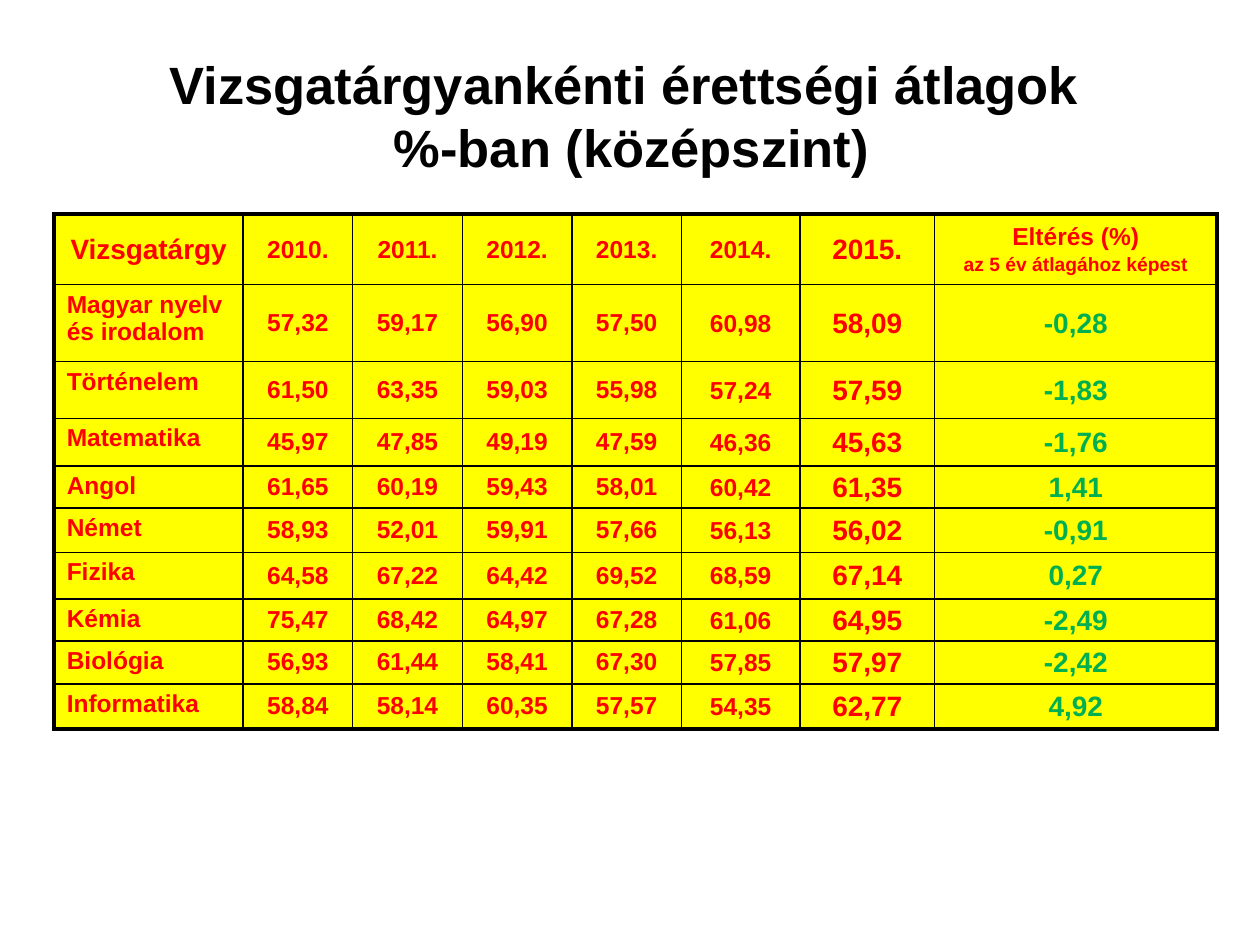
from dataclasses import dataclass

from lxml.etree import SubElement
from pptx import Presentation
from pptx.dml.color import RGBColor as RGB
from pptx.enum.text import MSO_ANCHOR as Anchor, PP_ALIGN as Align
from pptx.oxml.ns import qn
from pptx.util import Inches, Pt


@dataclass(frozen=True)
class Theme:
    font: str = "Arial"
    ink: str = "000000"
    cell: str = "FFFF00"
    score: str = "FF0000"
    change: str = "00B050"
    title_size: float = 30
    strong_size: float = 16
    body_size: float = 14
    note_size: float = 11
    outer_line: float = 2.25
    inner_line: float = 1


HEADINGS = ["Vizsgatárgy", "2010.", "2011.", "2012.", "2013.", "2014.", "2015.",
            "Eltérés (%)\naz 5 év átlagához képest"]
RESULTS = [
    ["Magyar nyelv és irodalom", "57,32", "59,17", "56,90", "57,50", "60,98", "58,09", "-0,28"],
    ["Történelem", "61,50", "63,35", "59,03", "55,98", "57,24", "57,59", "-1,83"],
    ["Matematika", "45,97", "47,85", "49,19", "47,59", "46,36", "45,63", "-1,76"],
    ["Angol", "61,65", "60,19", "59,43", "58,01", "60,42", "61,35", "1,41"],
    ["Német", "58,93", "52,01", "59,91", "57,66", "56,13", "56,02", "-0,91"],
    ["Fizika", "64,58", "67,22", "64,42", "69,52", "68,59", "67,14", "0,27"],
    ["Kémia", "75,47", "68,42", "64,97", "67,28", "61,06", "64,95", "-2,49"],
    ["Biológia", "56,93", "61,44", "58,41", "67,30", "57,85", "57,97", "-2,42"],
    ["Informatika", "58,84", "58,14", "60,35", "57,57", "54,35", "62,77", "4,92"],
]
COLUMN_WIDTHS = [1.5] + [0.87] * 4 + [0.94, 1.07, 2.24]
ROW_HEIGHTS = [0.56, 0.61, 0.45, 0.38, 0.32, 0.35, 0.37, 0.33, 0.34, 0.36]
SUBJECT, LATEST_BASE, LATEST, CHANGE = 0, 5, 6, 7


class ResultsSlide:
    """Draws the elements of one slide in a shared style."""

    def __init__(self, slide, theme):
        self.slide = slide
        self.theme = theme

    def style(self, paragraph, size, color, align):
        paragraph.alignment = align
        for run in paragraph.runs:
            run.font.name = self.theme.font
            run.font.size = Pt(size)
            run.font.bold = True
            run.font.color.rgb = RGB.from_string(color)

    def title(self, text, left, top, width, height):
        box = self.slide.shapes.add_textbox(*map(Inches, (left, top, width, height)))
        frame = box.text_frame
        frame.word_wrap = True
        frame.vertical_anchor = Anchor.MIDDLE
        frame.text = text
        self.style(frame.paragraphs[0], self.theme.title_size, self.theme.ink, Align.CENTER)

    def borders(self, cell, outer_sides):
        properties = cell._tc.get_or_add_tcPr()
        for position, (side, is_outer) in enumerate(outer_sides.items()):
            weight = self.theme.outer_line if is_outer else self.theme.inner_line
            line = SubElement(properties, qn(f"a:{side}"), w=str(Pt(weight)))
            fill = SubElement(line, qn("a:solidFill"))
            SubElement(fill, qn("a:srgbClr"), val=self.theme.ink)
            properties.remove(line)
            properties.insert(position, line)

    def cell(self, cell, text, row, column):
        theme = self.theme
        is_heading = row == 0
        is_subject = column == SUBJECT and not is_heading
        cell.fill.solid()
        cell.fill.fore_color.rgb = RGB.from_string(theme.cell)
        cell.vertical_anchor = Anchor.TOP if is_subject else Anchor.MIDDLE
        if column >= LATEST_BASE and not is_heading:
            cell.margin_left = cell.margin_right = cell.margin_top = Inches(0.01)
            cell.margin_bottom = 0

        strong_columns = (SUBJECT, LATEST) if is_heading else (LATEST, CHANGE)
        size = theme.strong_size if column in strong_columns else theme.body_size
        color = theme.change if column == CHANGE and not is_heading else theme.score
        align = Align.LEFT if is_subject else Align.CENTER
        cell.text_frame.text = text
        heading, *notes = cell.text_frame.paragraphs
        self.style(heading, size, color, align)
        for note in notes:
            note.space_before = Pt(0.2 * theme.note_size)
            self.style(note, theme.note_size, color, align)

    def table(self, rows, left, top, widths, heights):
        frame = self.slide.shapes.add_table(
            len(rows), len(widths),
            *map(Inches, (left, top, sum(widths), sum(heights))))
        grid = frame.table
        for column, width in zip(grid.columns, widths):
            column.width = Inches(width)
        for row, height in zip(grid.rows, heights):
            row.height = Inches(height)
        for r, values in enumerate(rows):
            for c, value in enumerate(values):
                cell = grid.cell(r, c)
                self.cell(cell, value, r, c)
                self.borders(cell, {"lnL": c == 0, "lnR": c == len(widths) - 1,
                                    "lnT": r == 0, "lnB": r == len(rows) - 1})


def main():
    deck = Presentation()
    deck.slide_width, deck.slide_height = Inches(10), Inches(7.5)
    results = ResultsSlide(deck.slides.add_slide(deck.slide_layouts[6]), Theme())
    results.title("Vizsgatárgyankénti érettségi átlagok\v %-ban (középszint)",
                  0.27, 0.44, 9.37, 0.94)
    results.table([HEADINGS, *RESULTS], 0.43, 1.7, COLUMN_WIDTHS, ROW_HEIGHTS)
    deck.save("out.pptx")


if __name__ == "__main__":
    main()
